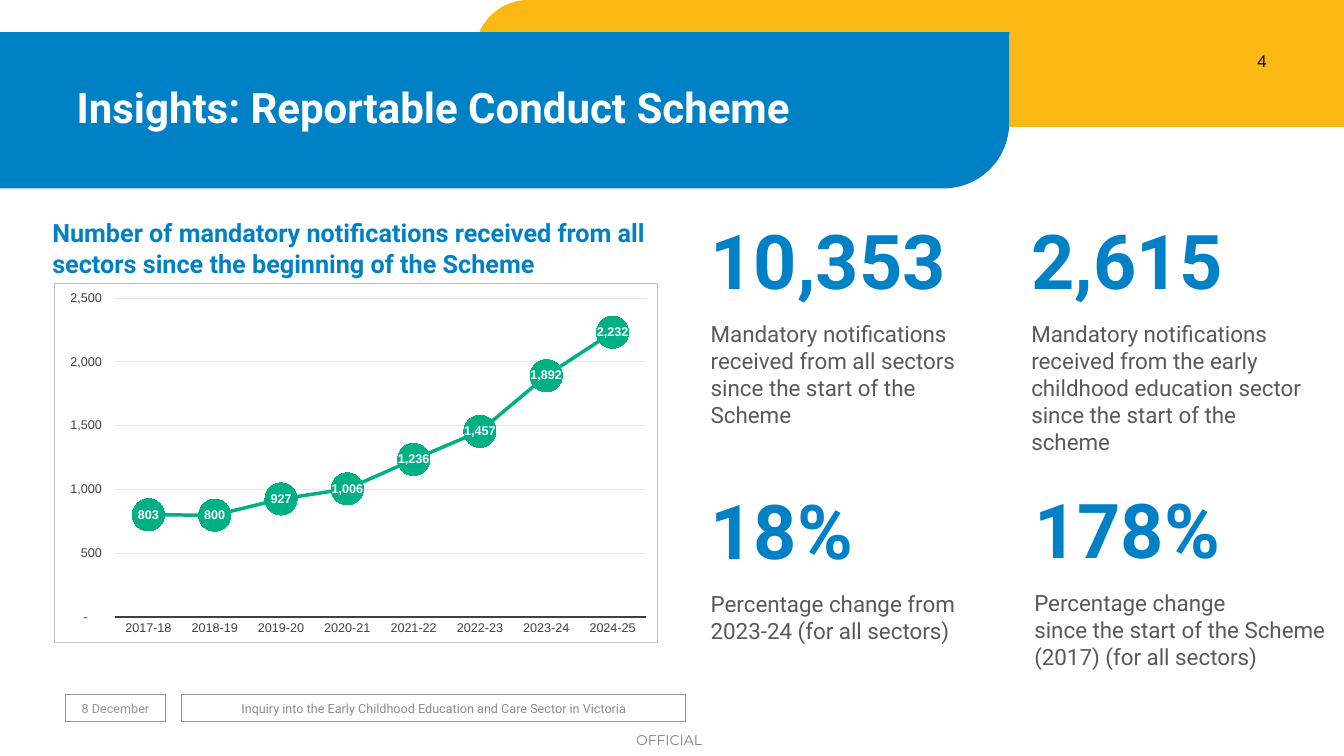
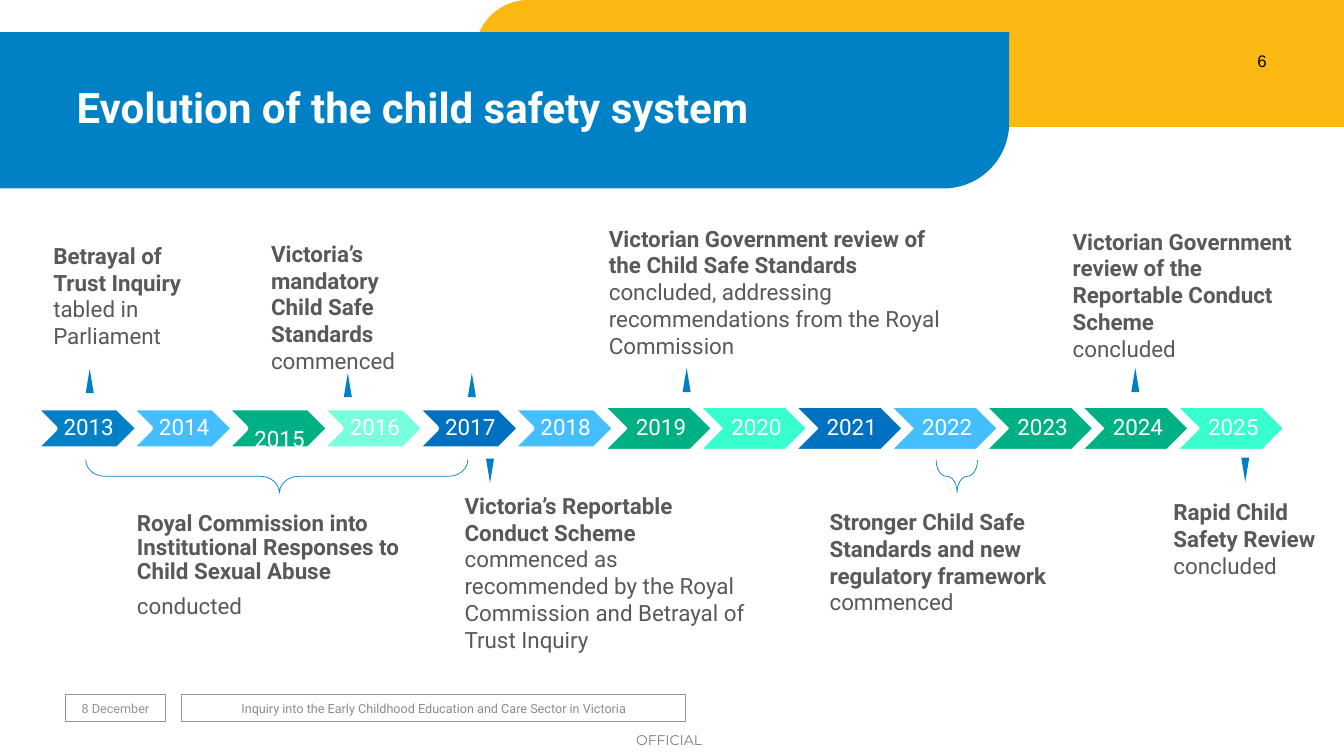
from typing import NamedTuple

import pptx
import pptx.chart.data
import pptx.dml.color
import pptx.enum.chart
import pptx.enum.shapes
import pptx.enum.text
import pptx.oxml
import pptx.oxml.ns
import pptx.util

Inches = pptx.util.Inches
Pt = pptx.util.Pt
Shapes = pptx.enum.shapes.MSO_SHAPE
Align = pptx.enum.text.PP_ALIGN
Anchor = pptx.enum.text.MSO_ANCHOR

BLUE, DEEP_BLUE, SKY = "0081C6", "0070C0", "44BEFF"
GREEN, MINT, PALE_MINT = "00B085", "37FFCE", "79FFDE"
YELLOW, WHITE, BLACK, BODY = "FDB913", "FFFFFF", "000000", "595959"
FOOTER_LINE, FOOTER_TEXT, OFFICIAL_GREY = "939598", "8C8C8C", "7F7F7F"
AXIS, GRID, CHART_BORDER = "404040", "E4E7E9", "BFBFBF"
ACCOUNTING = '_-* #,##0_-;\\-* #,##0_-;_-* "-"??_-;_-@_'


class Box(NamedTuple):
    left: float
    top: float
    width: float
    height: float


class Statistic(NamedTuple):
    left: float
    top: float
    figure: str
    meaning: list[str]
    width: float


class Year(NamedTuple):
    label: str
    color: str


class Milestone(NamedTuple):
    box: Box
    name: str
    outcome: list[str]
    spacing: float = 1.0
    gap: float = 0


class Pointer(NamedTuple):
    left: float
    top: float
    down: bool = False


STATISTICS = [
    Statistic(6.95, 2.07, "10,353", ["Mandatory notifications received from all sectors "
                                     "since the start of the Scheme"], 2.95),
    Statistic(10.13, 2.07, "2,615", ["Mandatory notifications received from the early childhood "
                                     "education sector since the start of the scheme"], 2.95),
    Statistic(6.95, 4.75, "18%", ["Percentage change from 2023-24 (for all sectors)"], 3.18),
    Statistic(10.16, 4.74, "178%", ["Percentage change",
                                    "since the start of the Scheme (2017) (for all sectors)"], 3.17),
]

NOTIFICATIONS = {
    "2017-18": 803, "2018-19": 800, "2019-20": 927, "2020-21": 1006,
    "2021-22": 1236, "2022-23": 1457, "2023-24": 1892, "2024-25": 2232,
}

YEARS = [
    Year("2013", BLUE), Year("2014", SKY), Year(" 2015", GREEN), Year("2016", PALE_MINT),
    Year("2017", DEEP_BLUE), Year("2018", SKY), Year("2019", GREEN), Year("2020", MINT),
    Year("2021", DEEP_BLUE), Year("2022", SKY), Year("2023", GREEN), Year("2024", GREEN),
    Year("2025", MINT),
]

MILESTONES = [
    Milestone(Box(0.43, 2.35, 1.81, 1.18), "Betrayal of Trust Inquiry", ["tabled in Parliament"]),
    Milestone(Box(2.59, 2.33, 1.65, 1.45), "Victoria’s mandatory Child Safe Standards",
              ["commenced"]),
    Milestone(Box(5.94, 2.18, 3.62, 1.45),
              "Victorian Government review of the Child Safe Standards",
              ["concluded, addressing recommendations from the Royal Commission"]),
    Milestone(Box(10.54, 2.21, 2.39, 1.45),
              "Victorian Government review of the Reportable Conduct Scheme", ["concluded"]),
    Milestone(Box(1.26, 5.03, 2.85, 0.87),
              "Royal Commission into Institutional Responses to Child Sexual Abuse",
              ["conducted"], 0.9, 7.5),
    Milestone(Box(4.51, 4.83, 3.11, 1.72), "Victoria’s Reportable Conduct Scheme",
              ["commenced as",
               "recommended by the Royal Commission and Betrayal of Trust Inquiry"]),
    Milestone(Box(8.13, 4.99, 2.66, 1.18),
              "Stronger Child Safe Standards and new regulatory framework", ["commenced"]),
    Milestone(Box(11.54, 4.89, 1.79, 0.91), "Rapid Child Safety Review", ["concluded"]),
]

POINTERS = [
    Pointer(0.85, 3.66), Pointer(3.41, 3.7), Pointer(4.64, 3.7), Pointer(6.77, 3.65),
    Pointer(11.22, 3.65), Pointer(4.82, 4.55, True), Pointer(12.31, 4.54, True),
]

BRACES = [Box(2.58, 2.83, 0.33, 3.79), Box(9.33, 4.52, 0.32, 0.41)]


def rgb(color: str) -> pptx.dml.color.RGBColor:
    return pptx.dml.color.RGBColor.from_string(color)


def style_font(font, size: float, color: str, bold: bool = False, name: str = "Roboto") -> None:
    font.size, font.bold, font.name = Pt(size), bold, name
    font.color.rgb = rgb(color)


def fill_with(part, color: str) -> None:
    part.fill.solid()
    part.fill.fore_color.rgb = rgb(color)


def draw_line(line, color: str, width: float) -> None:
    line.color.rgb = rgb(color)
    line.width = Pt(width)


def write(frame, paragraphs: list[str], size: float, color: str, bold: bool = False,
          name: str = "Roboto", align=Align.LEFT, spacing: float = 1.0) -> None:
    frame.word_wrap = True
    frame.text = "\n".join(paragraphs)
    for paragraph in frame.paragraphs:
        paragraph.alignment = align
        paragraph.line_spacing = spacing
        for run in paragraph.runs:
            style_font(run.font, size, color, bold, name)


def set_margins(frame, left: float, top: float, right: float, bottom: float) -> None:
    frame.margin_left, frame.margin_top = Inches(left), Inches(top)
    frame.margin_right, frame.margin_bottom = Inches(right), Inches(bottom)


def add_shape(slide, preset, box: Box, fill: str = "", line: str = "", width: float = 1):
    shape = slide.shapes.add_shape(preset, *map(Inches, box))
    shape.shadow.inherit = False
    if fill:
        fill_with(shape, fill)
    else:
        shape.fill.background()
    if line:
        draw_line(shape.line, line, width)
    else:
        shape.line.fill.background()
    return shape


def add_text(slide, box: Box, paragraphs: list[str], size: float, color: str, **style):
    frame = slide.shapes.add_textbox(*map(Inches, box)).text_frame
    write(frame, paragraphs, size, color, **style)
    return frame


def add_band(slide, box: Box, color: str, rotation: int = 0) -> None:
    band = add_shape(slide, Shapes.ROUND_1_RECTANGLE, box, color)
    band.adjustments[0] = 0.421
    band.rotation = rotation
    band._element.spPr.xfrm.set("flipV", "1")


def add_footer_box(slide, box: Box, text: str, color: str) -> None:
    frame = add_shape(slide, Shapes.RECTANGLE, box, line=FOOTER_LINE, width=0.25).text_frame
    frame.vertical_anchor = Anchor.MIDDLE
    write(frame, [text], 9, color, align=Align.CENTER)


def add_framed_slide(deck, heading: str, number: str):
    """Add a slide with bands, title, page number and footer."""
    slide = deck.slides.add_slide(deck.slide_layouts[5])
    add_band(slide, Box(4.71, 0, 8.64, 1.26), YELLOW, 180)
    add_band(slide, Box(0, 0.32, 10.01, 1.55), BLUE)

    # Title, brought in front of the bands
    title = slide.shapes.title
    slide.shapes._spTree.append(title._element)
    title.left, title.top, title.width, title.height = map(Inches, (0.66, 0.32, 9.09, 1.55))
    title.text_frame.auto_size = pptx.enum.text.MSO_AUTO_SIZE.NONE
    title.text_frame.vertical_anchor = Anchor.MIDDLE
    write(title.text_frame, [heading], 30, WHITE, bold=True, spacing=0.9)

    # Page number and footer
    page = add_text(slide, Box(11.34, 0, 1.32, 1.26), [number], 12, BLACK,
                    name="Arial", align=Align.RIGHT)
    page.vertical_anchor = Anchor.MIDDLE
    set_margins(page, 0.1, 0, 0.1, 0.05)
    add_footer_box(slide, Box(0.65, 6.89, 0.99, 0.27), "8 December", FOOTER_LINE)
    add_footer_box(slide, Box(1.8, 6.89, 5, 0.27),
                   "Inquiry into the Early Childhood Education and Care Sector in Victoria",
                   FOOTER_TEXT)
    marking = add_text(slide, Box(6.31, 7.26, 0.76, 0.17), ["OFFICIAL"], 10, OFFICIAL_GREY,
                       name="Montserrat")
    marking.word_wrap = False
    set_margins(marking, 0, 0, 0, 0)
    return slide


def frame_chart(chart) -> None:
    """Fix the plot area and give the chart a white ground with a thin border."""
    namespaces = pptx.oxml.ns.nsdecls("c", "a")
    plot_area = chart._chartSpace.chart.plotArea
    for layout in plot_area.findall(pptx.oxml.ns.qn("c:layout")):
        plot_area.remove(layout)
    edges = "".join(f'<c:{tag} val="{value}"/>' for tag, value in (
        ("layoutTarget", "inner"), ("xMode", "edge"), ("yMode", "edge"),
        ("x", 0.1), ("y", 0.04), ("w", 0.88), ("h", 0.89)))
    plot_area.insert(0, pptx.oxml.parse_xml(
        f"<c:layout {namespaces}><c:manualLayout>{edges}</c:manualLayout></c:layout>"))
    chart._chartSpace.chart.addnext(pptx.oxml.parse_xml(
        f'<c:spPr {namespaces}><a:solidFill><a:srgbClr val="{WHITE}"/></a:solidFill>'
        f'<a:ln w="{Pt(0.75)}"><a:solidFill><a:srgbClr val="{CHART_BORDER}"/></a:solidFill>'
        "</a:ln></c:spPr>"))


def add_notifications_chart(slide) -> None:
    data = pptx.chart.data.CategoryChartData(number_format=ACCOUNTING)
    data.categories = list(NOTIFICATIONS)
    data.add_series("Series 1", list(NOTIFICATIONS.values()))
    chart = slide.shapes.add_chart(pptx.enum.chart.XL_CHART_TYPE.LINE_MARKERS,
                                   *map(Inches, (0.54, 2.81, 5.99, 3.57)), data).chart
    chart.has_legend = chart.has_title = False
    style_font(chart.font, 10, BLACK, name="Arial")
    frame_chart(chart)

    # Axes
    years, counts = chart.category_axis, chart.value_axis
    for axis in (years, counts):
        style_font(axis.tick_labels.font, 9, AXIS, name="Arial")
    years.major_tick_mark = pptx.enum.chart.XL_TICK_MARK.NONE
    draw_line(years.format.line, AXIS, 1.5)
    counts.minimum_scale, counts.maximum_scale, counts.major_unit = 0, 2500, 500
    counts.format.line.fill.background()
    draw_line(counts.major_gridlines.format.line, GRID, 0.75)
    counts.tick_labels.number_format = ACCOUNTING
    counts.tick_labels.number_format_is_linked = False

    # Line, markers and values
    plot = chart.plots[0]
    plot.vary_by_categories = False
    notifications = plot.series[0]
    notifications.smooth = False
    draw_line(notifications.format.line, GREEN, 2.5)
    notifications.marker.style = pptx.enum.chart.XL_MARKER_STYLE.CIRCLE
    notifications.marker.size = 23
    fill_with(notifications.marker.format, GREEN)
    draw_line(notifications.marker.format.line, GREEN, 0.75)
    values = notifications.data_labels
    values.show_value = True
    values.position = pptx.enum.chart.XL_LABEL_POSITION.CENTER
    values.number_format, values.number_format_is_linked = ACCOUNTING, False
    style_font(values.font, 9, WHITE, True, "Arial")


def add_milestone(slide, milestone: Milestone) -> None:
    frame = add_text(slide, milestone.box, [milestone.name, *milestone.outcome], 16, BODY,
                     spacing=milestone.spacing)
    frame.paragraphs[0].runs[0].font.bold = True
    for outcome in frame.paragraphs[1:]:
        outcome.space_before = Pt(milestone.gap)


def build_insights(deck) -> None:
    slide = add_framed_slide(deck, "Insights: Reportable Conduct Scheme", "4")
    add_text(slide, Box(0.42, 2.11, 6.41, 0.71),
             ["Number of mandatory notifications received from all sectors "
              "since the beginning of the Scheme"], 18, BLUE, bold=True)
    add_notifications_chart(slide)
    for item in STATISTICS:
        add_text(slide, Box(item.left, item.top, 2.68, 1.01), [item.figure], 54, BLUE, bold=True)
        add_text(slide, Box(item.left, item.top + 1.06, item.width, 1.18), item.meaning, 16, BODY)


def build_evolution(deck) -> None:
    slide = add_framed_slide(deck, "Evolution of the child safety system", "6")

    # Row of years: the first six have a heavier white outline
    for index, year in enumerate(YEARS):
        chevron = add_shape(slide, Shapes.CHEVRON, Box(0.33 + index * 0.946, 4.04, 1.05, 0.42),
                            year.color, WHITE, 4.5 if index < 6 else 1)
        chevron.text_frame.vertical_anchor = Anchor.MIDDLE
        set_margins(chevron.text_frame, 0.07, 0.02, 0.02, 0.02)
        write(chevron.text_frame, [year.label], 16, WHITE, align=Align.CENTER, spacing=0.9)

    # Braces and pointers tie the milestones to the years
    for box in BRACES:
        brace = add_shape(slide, Shapes.LEFT_BRACE, box, line=BLUE, width=0.5)
        brace.adjustments[0], brace.adjustments[1] = 0.573, 0.507
        brace.rotation = 270
    for pointer in POINTERS:
        triangle = add_shape(slide, Shapes.ISOSCELES_TRIANGLE,
                             Box(pointer.left, pointer.top, 0.08, 0.24), BLUE)
        triangle.rotation = 180 if pointer.down else 0
    for milestone in MILESTONES:
        add_milestone(slide, milestone)


def main() -> None:
    deck = pptx.Presentation()
    deck.slide_width, deck.slide_height = Inches(13.33), Inches(7.5)
    build_insights(deck)
    build_evolution(deck)
    deck.save("out.pptx")


if __name__ == "__main__":
    main()
